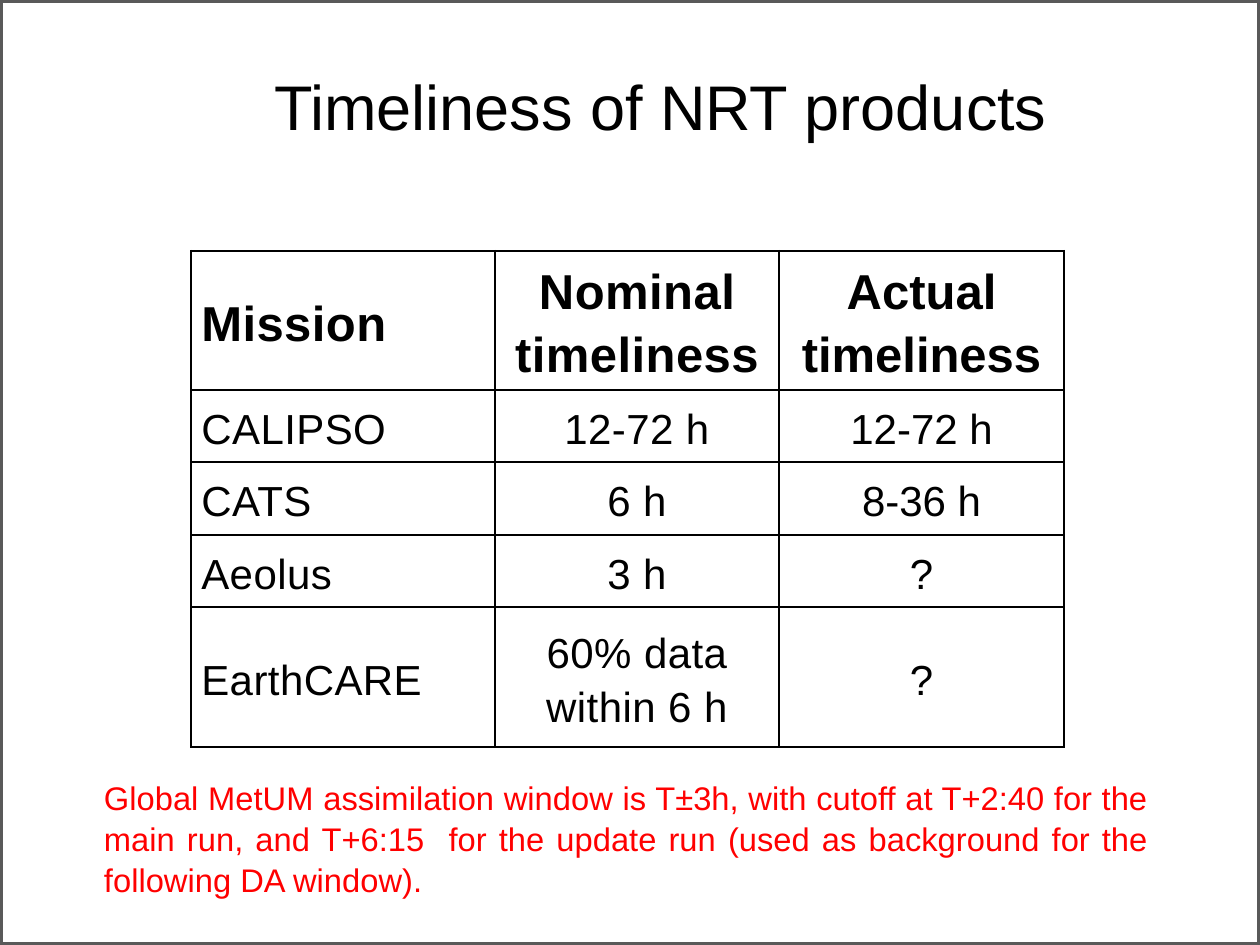
from lxml import etree
from pptx import Presentation
from pptx import util as u
from pptx.dml.color import RGBColor
from pptx.enum import shapes, text
from pptx.oxml.ns import qn

COLORS = {"white": "FFFFFF", "black": "000000", "frame": "595959", "note": "FF0000"}
ALIGN = text.PP_ALIGN
ANCHOR = text.MSO_ANCHOR

ROWS = [
    ["Mission", "Nominal\ntimeliness", "Actual timeliness"],
    ["CALIPSO", "12-72 h", "12-72 h"],
    ["CATS", "6 h", "8-36 h"],
    ["Aeolus", "3 h", "?"],
    ["EarthCARE", "60% data\nwithin 6 h", "?"],
]
COLUMN_WIDTHS = [130, 122, 122]
ROW_HEIGHTS = [59.6, 31.1, 31.1, 31.1, 59.6]
COLUMN_ALIGNS = [ALIGN.JUSTIFY, ALIGN.CENTER, ALIGN.CENTER]
COLUMN_TRACKING = [0.2, 0.2, 0]


def rgb(name):
    return RGBColor.from_string(COLORS[name])


class SlideBuilder:
    font_name = "Arial"

    def __init__(self, slide):
        self.slide = slide
        slide.background.fill.solid()
        slide.background.fill.fore_color.rgb = rgb("white")

    def format(self, frame, size, color="black", align=ALIGN.LEFT, spacing=1.0,
               bold=False, tracking=0):
        for paragraph in frame.paragraphs:
            paragraph.alignment = align
            paragraph.line_spacing = spacing
            for run in paragraph.runs:
                run.font.name = self.font_name
                run.font.size = u.Pt(size)
                run.font.bold = bold
                run.font.color.rgb = rgb(color)
                if tracking:
                    run._r.get_or_add_rPr().set("spc", str(round(tracking * 100)))

    def frame(self, width, height):
        shape = self.slide.shapes.add_shape(
            shapes.MSO_SHAPE.RECTANGLE, 0, 0, u.Pt(width), u.Pt(height))
        shape.shadow.inherit = False
        shape.fill.background()
        shape.line.color.rgb = rgb("frame")
        shape.line.width = u.Pt(2.25)

    def text_box(self, content, left, top, width, height, size,
                 insets=(7.2, 3.6), anchor=ANCHOR.TOP, **style):
        shape = self.slide.shapes.add_textbox(*map(u.Pt, (left, top, width, height)))
        frame = shape.text_frame
        frame.word_wrap = True
        frame.vertical_anchor = anchor
        frame.margin_left = frame.margin_right = u.Pt(insets[0])
        frame.margin_top = frame.margin_bottom = u.Pt(insets[1])
        frame.text = content
        self.format(frame, size, **style)

    def table(self, left, top):
        shape = self.slide.shapes.add_table(
            len(ROWS), len(COLUMN_WIDTHS), u.Pt(left), u.Pt(top),
            u.Pt(sum(COLUMN_WIDTHS)), u.Pt(sum(ROW_HEIGHTS)))
        table = shape.table
        table.horz_banding = False
        for column, width in zip(table.columns, COLUMN_WIDTHS):
            column.width = u.Pt(width)
        for row, height in zip(table.rows, ROW_HEIGHTS):
            row.height = u.Pt(height)
        for row, values in enumerate(ROWS):
            for column, value in enumerate(values):
                self.cell(table.cell(row, column), value, row == 0, column)

    def cell(self, cell, value, is_header, column):
        cell.margin_left = cell.margin_right = u.Pt(4.3)
        cell.margin_top = cell.margin_bottom = 0
        cell.vertical_anchor = ANCHOR.MIDDLE
        self.borders(cell)
        cell.fill.background()
        cell.text_frame.text = value
        self.format(cell.text_frame, 21 if is_header else 18, bold=is_header,
                    align=COLUMN_ALIGNS[column], spacing=1.15,
                    tracking=COLUMN_TRACKING[column])

    def borders(self, cell):
        properties = cell._tc.get_or_add_tcPr()
        for side in ("a:lnL", "a:lnR", "a:lnT", "a:lnB"):
            line = etree.SubElement(properties, qn(side), w=str(u.Pt(1)))
            fill = etree.SubElement(line, qn("a:solidFill"))
            etree.SubElement(fill, qn("a:srgbClr"), val=COLORS["black"])


def main():
    presentation = Presentation()
    presentation.slide_width = u.Pt(540)
    presentation.slide_height = u.Pt(405)
    builder = SlideBuilder(presentation.slides.add_slide(presentation.slide_layouts[6]))
    builder.frame(540, 405)
    builder.text_box("Timeliness of NRT products", 112.5, 8.5, 412.5, 55.5, 27,
                     insets=(5, 2.7), anchor=ANCHOR.BOTTOM, spacing=0.85)
    builder.table(82, 107.5)
    builder.text_box(
        "Global MetUM assimilation window is T±3h, with cutoff at T+2:40 for the "
        "main run, and T+6:15  for the update run (used as background for the "
        "following DA window).",
        37.5, 329, 462, 58.5, 14, color="note", align=ALIGN.JUSTIFY, spacing=1.05)
    presentation.save("out.pptx")


if __name__ == "__main__":
    main()
